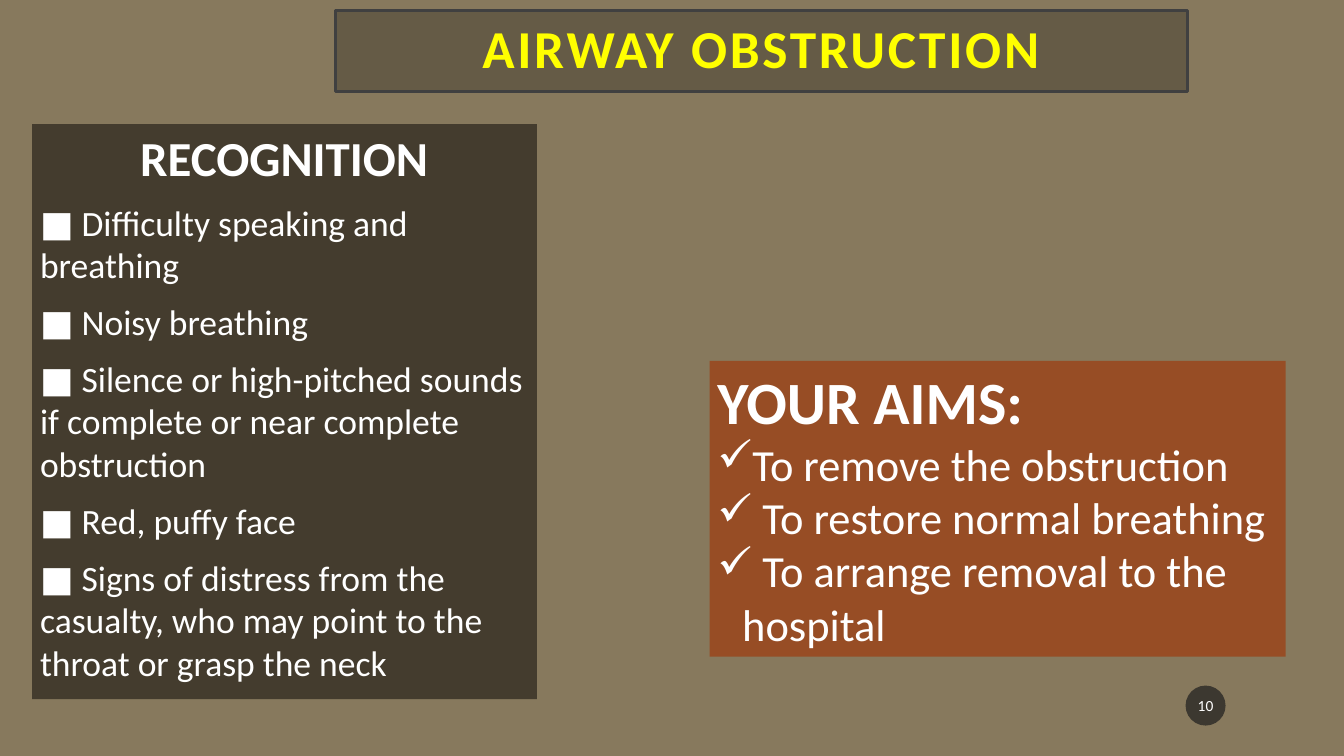
from pptx import Presentation
from pptx.dml.color import RGBColor
from pptx.enum.shapes import MSO_SHAPE
from pptx.enum.text import MSO_ANCHOR, MSO_AUTO_SIZE, PP_ALIGN
from pptx.oxml.ns import qn
from pptx.util import Inches, Pt
from lxml.etree import SubElement

COLORS = {
    "ground": "87795D", "banner": "655B46", "border": "404040",
    "panel": "443C2E", "aims": "974D25", "badge": "1D1D1D",
    "white": "FFFFFF", "yellow": "FFFF00",
}
SIGNS = [
    "Difficulty speaking and breathing",
    "Noisy breathing",
    "Silence or high-pitched sounds if complete or near complete obstruction",
    "Red, puffy face",
    "Signs of distress from the casualty, who may point to the throat or grasp the neck",
]
AIMS = [
    "To remove the obstruction",
    " To restore normal breathing",
    " To arrange removal to the hospital",
]


class Deck:
    """Holds the style and the current slide."""

    def __init__(self, wide, high):
        """Start a deck with one title and content slide."""
        self.deck = Presentation()
        self.deck.slide_width = Inches(wide)
        self.deck.slide_height = Inches(high)
        self.slide = self.deck.slides.add_slide(self.deck.slide_layouts[1])
        self.font = "Calibri"
        self.paint(self.slide.background.fill, "ground")

    def paint(self, fill, color):
        """Give a fill one solid named color."""
        fill.solid()
        fill.fore_color.rgb = RGBColor.from_string(COLORS[color])

    def place(self, shape, box, color, anchor=MSO_ANCHOR.TOP, pad=(0.1, 0.05)):
        """Set the place, fill and text frame of a shape."""
        shape.left, shape.top, shape.width, shape.height = map(Inches, box)
        self.paint(shape.fill, color)
        frame = shape.text_frame
        frame.word_wrap = True
        frame.auto_size = MSO_AUTO_SIZE.NONE
        frame.vertical_anchor = anchor
        frame.margin_left = frame.margin_right = Inches(pad[0])
        frame.margin_top = frame.margin_bottom = Inches(pad[1])
        return frame

    def line(self, frame, text, size, color="white", bold=False,
             align=PP_ALIGN.LEFT, before=0, mark=None):
        """Add one paragraph, with a bullet when a mark is given."""
        first = frame.paragraphs[0]
        para = first if not first.runs else frame.add_paragraph()
        para.add_run().text = text
        para.alignment = align
        para.space_before = Pt(before)
        props = para._p.get_or_add_pPr()
        indent = Inches(0.31) if mark else 0
        props.set("marL", str(indent))
        props.set("indent", str(-indent))
        if mark:
            SubElement(props, qn("a:buChar")).set("char", mark)
        else:
            SubElement(props, qn("a:buNone"))
        para.font.name = self.font
        para.font.size = Pt(size)
        para.font.bold = bold
        para.font.color.rgb = RGBColor.from_string(COLORS[color])
        return para

    def shape(self, kind):
        """Add a plain shape without line or shadow."""
        shape = self.slide.shapes.add_shape(kind, 0, 0, 0, 0)
        shape.shadow.inherit = False
        shape.line.fill.background()
        return shape

    def title(self, text, box):
        """Fill the title banner."""
        shape = self.slide.shapes.title
        frame = self.place(shape, box, "banner", MSO_ANCHOR.MIDDLE, (0.2, 0.2))
        self.paint(shape.line.fill, "border")
        shape.line.width = Pt(2.5)
        para = self.line(frame, text, 48, "yellow", True, PP_ALIGN.CENTER)
        para.line_spacing = 0.9
        para.runs[0].font._element.set("spc", "250")

    def body(self, head, items, box):
        """Fill the body panel with a heading and its signs."""
        frame = self.place(self.slide.placeholders[1], box, "panel")
        self.line(frame, head, 44, bold=True, align=PP_ALIGN.CENTER)
        for item in items:
            self.line(frame, f"■ {item}", 32, before=12.6)

    def panel(self, head, items, box):
        """Add a box with a heading and a checked list."""
        frame = self.place(self.shape(MSO_SHAPE.RECTANGLE), box, "aims")
        self.line(frame, head, 54, bold=True)
        for item in items:
            self.line(frame, item, 40, mark="✓")

    def badge(self, text, box):
        """Add the round page number."""
        shape = self.shape(MSO_SHAPE.OVAL)
        frame = self.place(shape, box, "badge", MSO_ANCHOR.MIDDLE, (0.02, 0.05))
        tone = shape.fill._xPr.find(qn("a:solidFill"))[0]
        SubElement(tone, qn("a:alpha")).set("val", "70000")
        self.line(frame, text, 13.9, align=PP_ALIGN.CENTER)


def main():
    """Build and save the slide."""
    deck = Deck(16.8, 9.45)
    deck.body("RECOGNITION", SIGNS, (0.4, 1.55, 6.31, 7.19))
    deck.panel("YOUR AIMS:", AIMS, (8.87, 4.51, 7.2, 3.7))
    deck.title("AIRWAY OBSTRUCTION", (4.19, 0.13, 10.65, 1.01))
    deck.badge("10", (14.82, 8.57, 0.5, 0.5))
    deck.deck.save("out.pptx")


if __name__ == "__main__":
    main()
